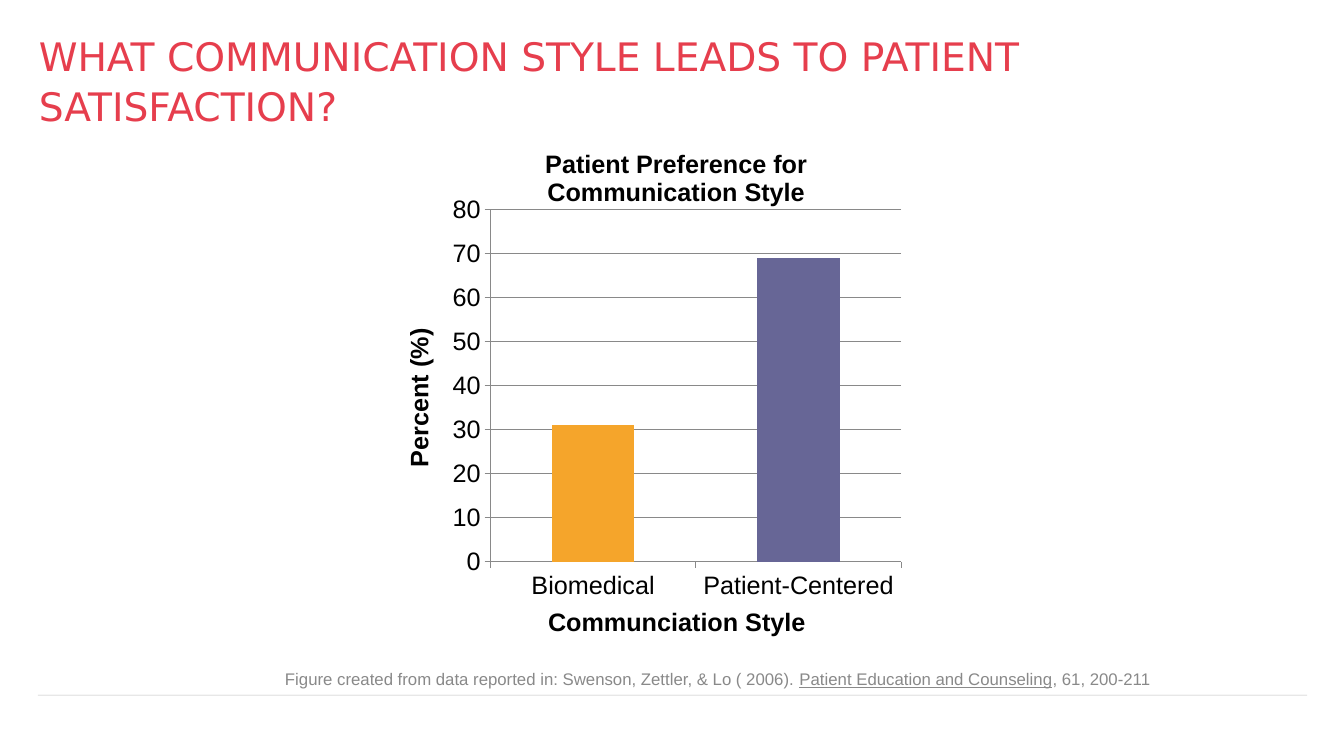
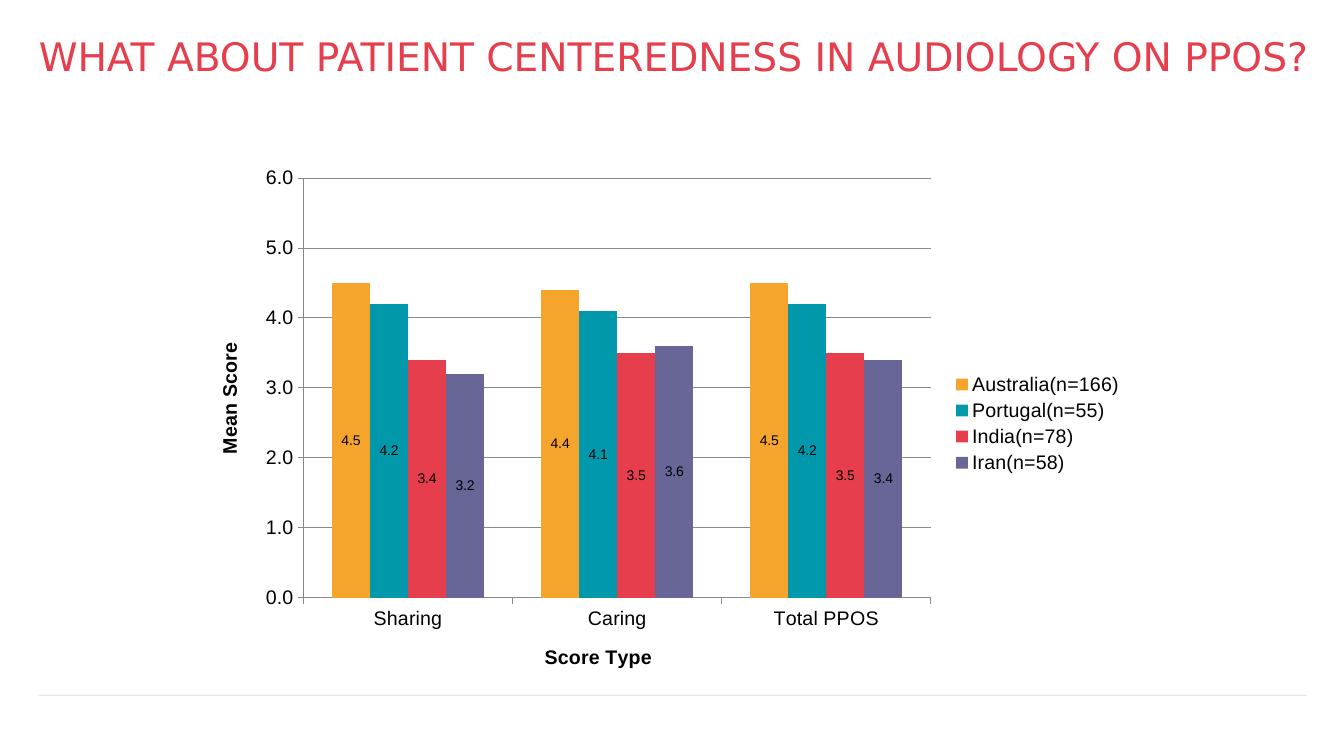
from lxml import etree
from pptx import Presentation
from pptx.chart.data import CategoryChartData
from pptx.dml.color import RGBColor
from pptx.enum.chart import (XL_CHART_TYPE, XL_LABEL_POSITION,
                             XL_LEGEND_POSITION, XL_TICK_MARK)
from pptx.enum.shapes import MSO_CONNECTOR
from pptx.enum.text import MSO_ANCHOR, MSO_AUTO_SIZE, PP_ALIGN
from pptx.oxml import parse_xml
from pptx.oxml.ns import nsdecls, qn
from pptx.util import Emu, Pt

# Shared style
EMU_PER_PX = 9525
SLIDE_SIZE = (1280, 720)
BODY_FONT = "Arial"
TITLE_FONT = "DejaVu Sans"
BLACK = RGBColor(0x00, 0x00, 0x00)
RULE = RGBColor(0x26, 0x26, 0x26)
GRAY = RGBColor(0x89, 0x89, 0x89)
ORANGE = RGBColor(0xF5, 0xA5, 0x2B)
TEAL = RGBColor(0x00, 0x98, 0xAA)
RED = RGBColor(0xE6, 0x3E, 0x4D)
PURPLE = RGBColor(0x67, 0x66, 0x96)
TITLE_BOX = (37, 29, 1214, 92)


def px(value):
    return Emu(value * EMU_PER_PX)


def style_font(font, size, color, name=BODY_FONT, bold=False):
    font.name = name
    font.size = Pt(size)
    font.bold = bold
    font.color.rgb = color


def add_titled_slide(presentation, text):
    """Title-only slide with the title and the rule above the footer."""
    slide = presentation.slides.add_slide(presentation.slide_layouts[5])
    add_footer_rule(slide, 36, 1245, 662)
    title = slide.shapes.title
    title.left, title.top, title.width, title.height = map(px, TITLE_BOX)
    frame = title.text_frame
    frame.word_wrap = True
    frame.auto_size = MSO_AUTO_SIZE.NONE
    frame.vertical_anchor = MSO_ANCHOR.TOP
    frame.margin_left = frame.margin_top = 0
    frame.margin_right = frame.margin_bottom = 0
    paragraph = frame.paragraphs[0]
    paragraph.alignment = PP_ALIGN.LEFT
    paragraph.line_spacing = 1.05
    run = paragraph.add_run()
    run.text = text
    style_font(run.font, 28, RED, TITLE_FONT)
    return slide


def add_footer_rule(slide, left, right, y):
    rule = slide.shapes.add_connector(
        MSO_CONNECTOR.STRAIGHT, px(left), px(y), px(right), px(y))
    rule.line.width = Pt(0.25)
    rule.line.color.rgb = RULE
    properties = rule.element.spPr
    color = properties.find(".//" + qn("a:srgbClr"))
    etree.SubElement(color, qn("a:alpha")).set("val", "31000")
    etree.SubElement(properties, qn("a:effectLst"))


def add_citation(slide, box, parts):
    """One line of small text; each part is (text, underlined)."""
    frame = slide.shapes.add_textbox(*map(px, box)).text_frame
    frame.word_wrap = True
    frame.auto_size = MSO_AUTO_SIZE.SHAPE_TO_FIT_TEXT
    for text, underlined in parts:
        run = frame.paragraphs[0].add_run()
        run.text = text
        style_font(run.font, 12, GRAY)
        run.font.underline = underlined


def set_heading(heading, text, size):
    """Bold title of a chart or of an axis."""
    run = heading.text_frame.paragraphs[0].add_run()
    run.text = text
    style_font(run.font, size, BLACK, bold=True)


def style_axis(axis, heading, size):
    set_heading(axis.axis_title, heading, size)
    axis.major_tick_mark = XL_TICK_MARK.OUTSIDE
    axis.minor_tick_mark = XL_TICK_MARK.NONE
    style_font(axis.tick_labels.font, size, BLACK)
    axis.format.line.color.rgb = GRAY
    axis.format.line.width = Pt(0.75)


def add_column_chart(slide, box, categories, series, headings, size, scale):
    """series holds (name, values, colour); scale is (maximum, step, format)."""
    data = CategoryChartData()
    data.categories = categories
    for name, values, _ in series:
        data.add_series(name, values)
    chart = slide.shapes.add_chart(
        XL_CHART_TYPE.COLUMN_CLUSTERED, *map(px, box), data).chart
    style_font(chart.font, 10, BLACK)
    chart.has_title = False
    chart.has_legend = False

    # Axes
    style_axis(chart.category_axis, headings[0], size)
    value_axis = chart.value_axis
    style_axis(value_axis, headings[1], size)
    value_axis.minimum_scale = 0
    value_axis.maximum_scale, value_axis.major_unit, number_format = scale
    value_axis.tick_labels.number_format = number_format
    value_axis.tick_labels.number_format_is_linked = False
    value_axis.has_major_gridlines = True
    grid_line = value_axis.major_gridlines.format.line
    grid_line.color.rgb = GRAY
    grid_line.width = Pt(0.75)

    # Columns
    plot = chart.plots[0]
    plot.gap_width = 150
    plot.overlap = 0
    plot.vary_by_categories = False
    for column_series, (_, _, color) in zip(plot.series, series):
        column_series.format.fill.solid()
        column_series.format.fill.fore_color.rgb = color
    return chart


def set_inner_plot(chart, x, y, width, height):
    """Fix the plot area inside the axes, as fractions of the chart."""
    plot_area = chart.element.find(".//" + qn("c:plotArea")) \
        if hasattr(chart, "element") else chart._chartSpace.find(".//" + qn("c:plotArea"))
    for layout in plot_area.findall(qn("c:layout")):
        plot_area.remove(layout)
    plot_area.insert(0, parse_xml(
        f'<c:layout {nsdecls("c")}><c:manualLayout>'
        '<c:layoutTarget val="inner"/><c:xMode val="edge"/><c:yMode val="edge"/>'
        f'<c:x val="{x}"/><c:y val="{y}"/><c:w val="{width}"/><c:h val="{height}"/>'
        '</c:manualLayout></c:layout>'))


def build_preference_slide(presentation):
    slide = add_titled_slide(
        presentation, "WHAT COMMUNICATION STYLE LEADS TO PATIENT SATISFACTION?")
    chart = add_column_chart(
        slide, (376, 121, 536, 493), ["Biomedical", "Patient-Centered"],
        [("Series 1", (31, 69), TEAL)],
        ("Communciation Style", "Percent (%)"), 18, (80, 10, "General"))
    chart.has_title = True
    set_heading(chart.chart_title, "Patient Preference for Communication Style", 18)
    set_inner_plot(chart, 0.17, 0.16, 0.73, 0.68)
    for index, color in enumerate((ORANGE, PURPLE)):
        fill = chart.plots[0].series[0].points[index].format.fill
        fill.solid()
        fill.fore_color.rgb = color
    add_citation(slide, (262, 632, 930, 29), [
        ("Figure created from data reported in: Swenson, Zettler, & Lo ( 2006). ", False),
        ("Patient Education and Counseling", True),
        (", 61, 200-211", False)])


def build_country_slide(presentation):
    slide = add_titled_slide(
        presentation, "WHAT ABOUT PATIENT CENTEREDNESS IN AUDIOLOGY ON PPOS?")
    chart = add_column_chart(
        slide, (186, 149, 894, 509), ["Sharing", "Caring", "Total PPOS"],
        [("Australia(n=166)", (4.5, 4.4, 4.5), ORANGE),
         ("Portugal(n=55)", (4.2, 4.1, 4.2), TEAL),
         ("India(n=78)", (3.4, 3.5, 3.5), RED),
         ("Iran(n=58)", (3.2, 3.6, 3.4), PURPLE)],
        ("Score Type", "Mean Score"), 14, (6, 1, "0.0"))
    chart.has_legend = True
    chart.legend.position = XL_LEGEND_POSITION.RIGHT
    chart.legend.include_in_layout = False
    style_font(chart.legend.font, 14, BLACK)
    for series in chart.plots[0].series:
        labels = series.data_labels
        labels.show_value = True
        labels.position = XL_LABEL_POSITION.CENTER
        labels.number_format = "0.0"
        labels.number_format_is_linked = False
        style_font(labels.font, 10, BLACK)


def main():
    presentation = Presentation()
    presentation.slide_width, presentation.slide_height = map(px, SLIDE_SIZE)
    build_preference_slide(presentation)
    build_country_slide(presentation)
    presentation.save("out.pptx")


if __name__ == "__main__":
    main()
